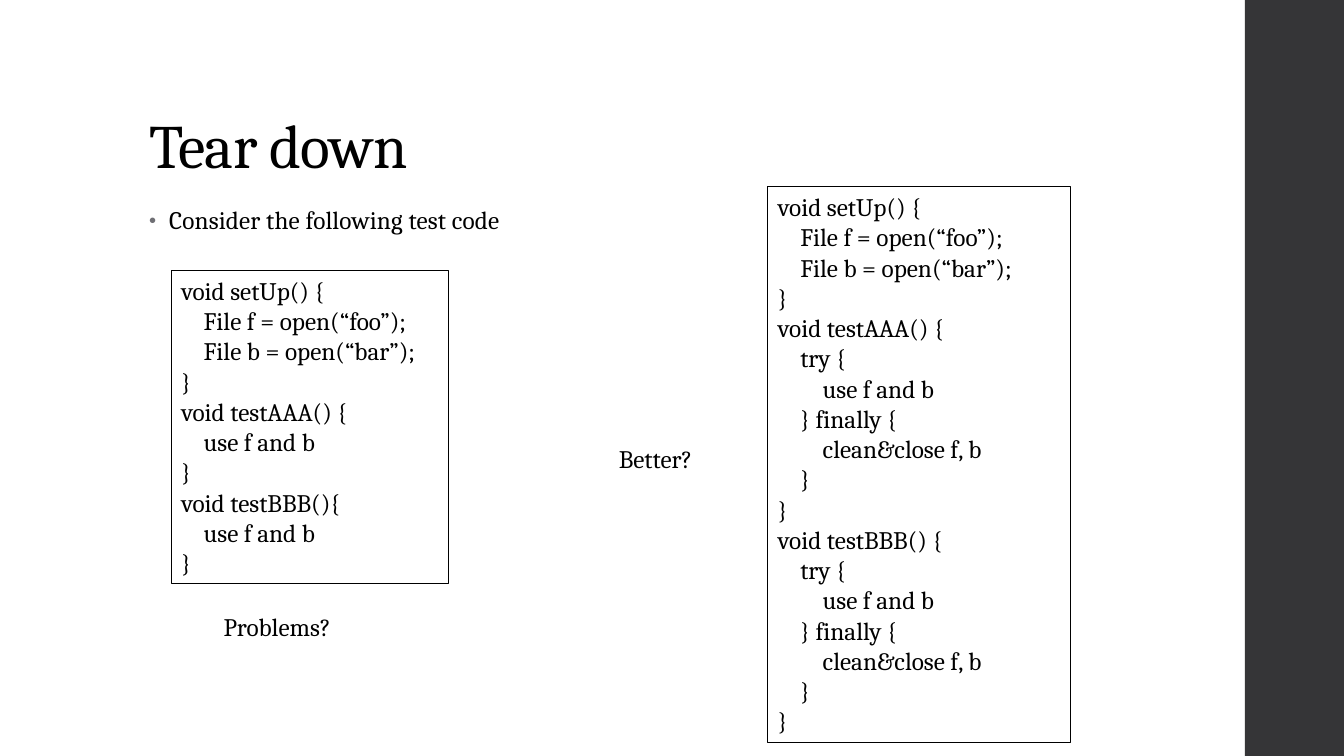
from lxml.etree import SubElement
from pptx import Presentation
from pptx.dml.color import RGBColor
from pptx.enum.shapes import MSO_SHAPE
from pptx.enum.text import MSO_ANCHOR, PP_ALIGN
from pptx.oxml.ns import qn
from pptx.util import Pt

BLACK = "000000"
CHARCOAL = "353537"
GRAY = "6F6F74"

SET_UP = [
    (0, "void setUp() {"),
    (1, "File f = open(“foo”);"),
    (1, "File b = open(“bar”);"),
    (0, "}"),
]
PLAIN_BODY = [(1, "use f and b"), (0, "}")]
GUARDED_BODY = [
    (1, "try {"),
    (2, "use f and b"),
    (1, "} finally {"),
    (2, "clean&close f, b"),
    (1, "}"),
    (0, "}"),
]
TEST_A = [(0, "void testAAA() {")]


def color(value):
    return RGBColor.from_string(value)


class SlideBuilder:
    font = "Cambria"
    size = 18
    code_indent = 16

    def __init__(self, page):
        self.page = page

    def rectangle(self, left, top, width, height, fill=None, line=None):
        shape = self.page.shapes.add_shape(
            MSO_SHAPE.RECTANGLE, Pt(left), Pt(top), Pt(width), Pt(height))
        shape.shadow.inherit = False
        if fill:
            shape.fill.solid()
            shape.fill.fore_color.rgb = color(fill)
        else:
            shape.fill.background()
        if line:
            shape.line.color.rgb = color(line)
            shape.line.width = Pt(0.75)
        else:
            shape.line.fill.background()
        return shape

    def add_span(self, para, words, size=None, tracking=0):
        span = para.add_run()
        span.text = words
        span.font.name = self.font
        span.font.size = Pt(size or self.size)
        span.font.color.rgb = color(BLACK)
        if tracking:
            span.font._element.set("spc", str(round(tracking * 100)))

    def text(self, left, top, width, height, words, size=None, tracking=0,
             anchor=MSO_ANCHOR.TOP, line_spacing=1.0):
        box = self.page.shapes.add_textbox(Pt(left), Pt(top), Pt(width), Pt(height))
        frame = box.text_frame
        frame.word_wrap = True
        frame.vertical_anchor = anchor
        para = frame.paragraphs[0]
        para.line_spacing = line_spacing
        self.add_span(para, words, size, tracking)
        return para

    def bullet(self, left, top, width, height, words):
        para = self.text(left, top, width, height, words, tracking=0.1, line_spacing=0.95)
        para.space_before = Pt(14)
        para.space_after = Pt(2)
        properties = para._p.get_or_add_pPr()
        properties.set("marL", str(Pt(14.4)))
        properties.set("indent", str(Pt(-14.4)))
        bullet_color = SubElement(properties, qn("a:buClr"))
        SubElement(bullet_color, qn("a:srgbClr"), val=GRAY)
        SubElement(properties, qn("a:buSzPct"), val="80000")
        SubElement(properties, qn("a:buFont"), typeface="Arial")
        SubElement(properties, qn("a:buChar"), char="•")

    def code(self, left, top, width, height, lines):
        box = self.rectangle(left, top, width, height, line=BLACK)
        frame = box.text_frame
        frame.word_wrap = True
        frame.vertical_anchor = MSO_ANCHOR.TOP
        for number, (level, words) in enumerate(lines):
            para = frame.add_paragraph() if number else frame.paragraphs[0]
            para.alignment = PP_ALIGN.LEFT
            para._p.get_or_add_pPr().set("marL", str(Pt(level * self.code_indent)))
            self.add_span(para, words)


def main():
    deck = Presentation()
    deck.slide_width = Pt(960)
    deck.slide_height = Pt(540)
    builder = SlideBuilder(deck.slides.add_slide(deck.slide_layouts[6]))

    builder.rectangle(889.2, 0, 72, 540, fill=CHARCOAL)
    builder.text(99.4, 28.8, 763.2, 104.4, "Tear down", size=44, tracking=-0.5,
                 anchor=MSO_ANCHOR.BOTTOM, line_spacing=0.9)
    builder.bullet(99.4, 144, 676.8, 342.7, "Consider the following test code")
    builder.code(122.4, 193, 198, 224,
                 SET_UP + TEST_A + PLAIN_BODY + [(0, "void testBBB(){")] + PLAIN_BODY)
    builder.text(152.6, 433.4, 100.8, 28.8, "Problems?")
    builder.code(548.6, 133.2, 216, 397.4,
                 SET_UP + TEST_A + GUARDED_BODY + [(0, "void testBBB() {")] + GUARDED_BODY)
    builder.text(434.9, 313.2, 72.7, 28.8, "Better?")

    deck.save("out.pptx")


if __name__ == "__main__":
    main()
